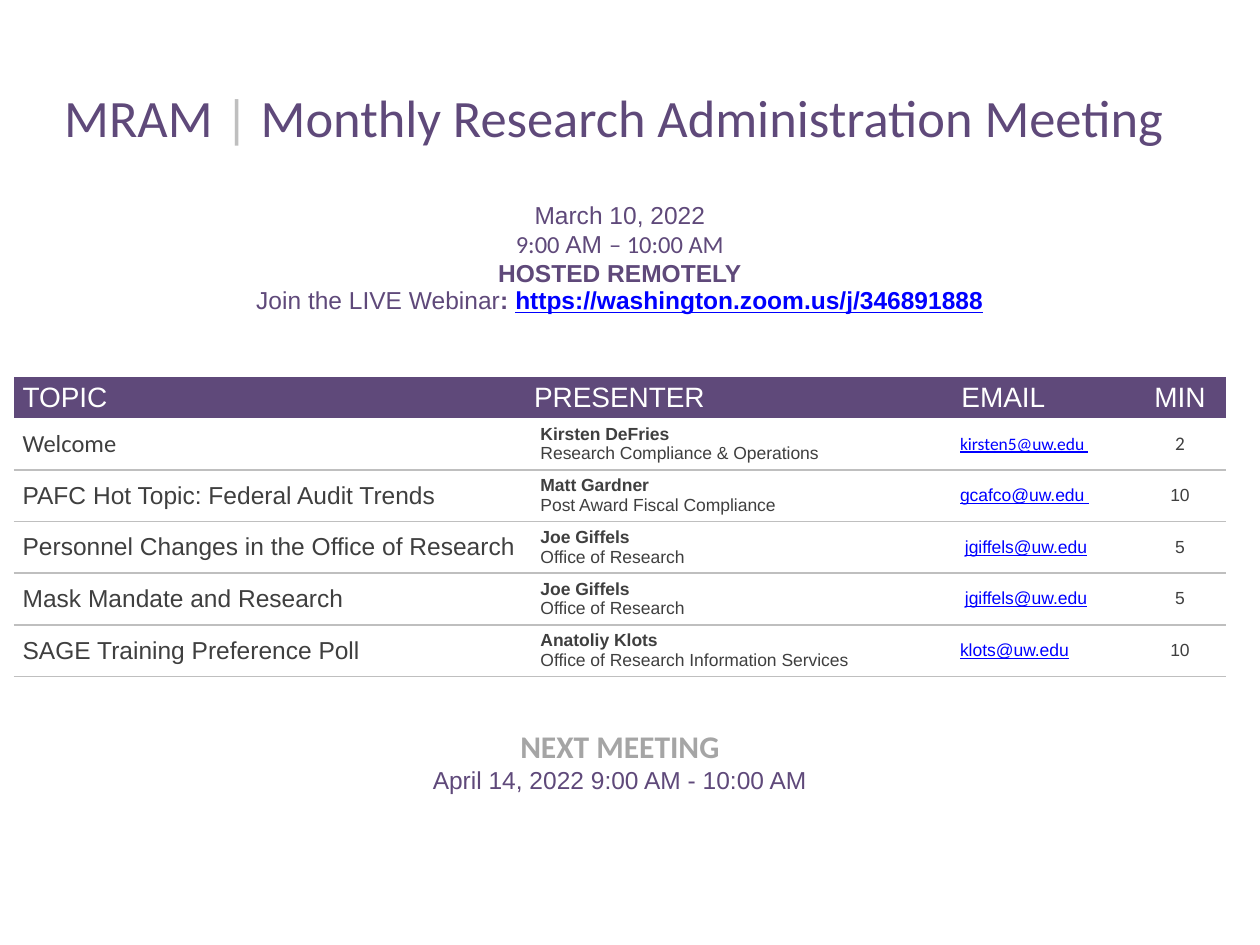
import pptx
import pptx.dml.color
import pptx.enum.text
import pptx.oxml
import pptx.oxml.ns
import pptx.util
from pptx.util import Inches

RGBColor = pptx.dml.color.RGBColor
ALIGN = pptx.enum.text.PP_ALIGN
ANCHOR = pptx.enum.text.MSO_ANCHOR

PURPLE = RGBColor(0x5F, 0x49, 0x7A)
WHITE = RGBColor(0xFF, 0xFF, 0xFF)
DARK = RGBColor(0x3F, 0x3F, 0x3F)
RULE_GRAY = RGBColor(0xBF, 0xBF, 0xBF)
HEADING_GRAY = RGBColor(0xA5, 0xA5, 0xA5)
LINK_BLUE = RGBColor(0x00, 0x00, 0xFF)
NO_GRID_STYLE = "{2D5ABB26-0587-4C30-8999-92F81FD0307C}"

COLUMN_WIDTHS = [4.06, 3.33, 1.5, 0.73]
TOPIC_HEIGHT = 0.41
ROW_HEIGHTS = [0.62, 1.79, 0.33] + [TOPIC_HEIGHT] * 5 + [1.19]

# topic, presenter, office, e-mail, minutes, font of topic, e-mail and minutes
AGENDA = [
    ("Welcome", "Kirsten DeFries", "Research Compliance & Operations",
     "kirsten5@uw.edu ", "2", "Calibri"),
    ("PAFC Hot Topic: Federal Audit Trends", "Matt Gardner",
     "Post Award Fiscal Compliance", "gcafco@uw.edu ", "10", "Arial"),
    ("Personnel Changes in the Office of Research", "Joe Giffels",
     "Office of Research", " jgiffels@uw.edu", "5", "Arial"),
    ("Mask Mandate and Research", "Joe Giffels",
     "Office of Research", " jgiffels@uw.edu", "5", "Arial"),
    ("SAGE Training Preference Poll", "Anatoliy Klots",
     "Office of Research Information Services", "klots@uw.edu", "10", "Arial"),
]


def text_run(text, size, color, font="Arial", bold=False, underline=False):
    return text, size, color, font, bold, underline


def fill_cell(cell, lines, align=ALIGN.LEFT, anchor=ANCHOR.MIDDLE,
              fill=WHITE, side=0.07, bottom=0):
    """Write lines, each a list of text runs, into a cell."""
    cell.fill.solid()
    cell.fill.fore_color.rgb = fill
    cell.vertical_anchor = anchor
    cell.margin_left = cell.margin_right = Inches(side)
    cell.margin_top, cell.margin_bottom = 0, Inches(bottom)
    for index, line in enumerate(lines):
        frame = cell.text_frame
        paragraph = frame.paragraphs[0] if index == 0 else frame.add_paragraph()
        paragraph.alignment = align
        for text, size, color, font, bold, underline in line:
            run = paragraph.add_run()
            run.text = text
            run.font.size = pptx.util.Pt(size)
            run.font.color.rgb = color
            run.font.name = font
            run.font.bold = bold
            run.font.underline = underline


def rule_below(cell):
    border = pptx.oxml.parse_xml(
        f'<a:lnB {pptx.oxml.ns.nsdecls("a")} w="12700"><a:solidFill>'
        f'<a:srgbClr val="{RULE_GRAY}"/></a:solidFill></a:lnB>')
    cell._tc.get_or_add_tcPr().insert(0, border)


def merged_row(table, row):
    first = table.cell(row, 0)
    first.merge(table.cell(row, len(COLUMN_WIDTHS) - 1))
    return first


def add_meeting_table(slide, left, top, width, height):
    frame = slide.shapes.add_table(len(ROW_HEIGHTS), len(COLUMN_WIDTHS),
                                   left, top, width, height)
    table = frame.table
    table.first_row = table.horz_banding = False
    style = table._tbl.tblPr.find(pptx.oxml.ns.qn("a:tableStyleId"))
    style.text = NO_GRID_STYLE
    for column, column_width in zip(table.columns, COLUMN_WIDTHS):
        column.width = Inches(column_width)
    for row, row_height in zip(table.rows, ROW_HEIGHTS):
        row.height = Inches(row_height)
    return table


def write_title(cell):
    fill_cell(cell, [[
        text_run("MRAM ", 30, PURPLE, "Calibri"),
        text_run("|", 30, RULE_GRAY, "Calibri"),
        text_run(" Monthly Research Administration Meeting ", 30, PURPLE, "Calibri"),
    ]], ALIGN.CENTER, ANCHOR.BOTTOM)


def write_session(cell):
    fill_cell(cell, [
        [text_run("March 10, 2022", 14, PURPLE)],
        [text_run("9:00 ", 14, PURPLE, "Calibri"),
         text_run("AM ", 14, PURPLE),
         text_run("– 10:00 AM", 14, PURPLE, "Calibri")],
        [text_run("HOSTED REMOTELY", 14, PURPLE, bold=True)],
        [text_run("Join the LIVE Webinar", 14, PURPLE),
         text_run(": ", 14, PURPLE, bold=True),
         text_run("https://washington.zoom.us/j/346891888", 14, LINK_BLUE,
                  bold=True, underline=True)],
    ], ALIGN.CENTER, ANCHOR.BOTTOM, bottom=0.49)


def write_agenda(table, first_row):
    # Column headings
    headings = ["TOPIC", "PRESENTER", " EMAIL", "MIN"]
    for column, heading in enumerate(headings):
        fill_cell(table.cell(first_row, column), [[text_run(heading, 16, WHITE)]],
                  ALIGN.CENTER if heading == "MIN" else ALIGN.LEFT, fill=PURPLE)

    # One row for each topic
    for row, entry in enumerate(AGENDA, first_row + 1):
        topic, presenter, office, email, minutes, font = entry
        topic_cell, presenter_cell, email_cell, minutes_cell = table.rows[row].cells
        fill_cell(topic_cell, [[text_run(topic, 14, DARK, font)]])
        fill_cell(presenter_cell, [[text_run(presenter, 10, DARK, bold=True)],
                                   [text_run(office, 10, DARK)]], side=0.12)
        address = email.lstrip()
        email_line = [text_run(address, 10, LINK_BLUE, font, underline=True)]
        if address != email:
            email_line.insert(0, text_run(" ", 10, DARK))
        fill_cell(email_cell, [email_line], side=0.12)
        fill_cell(minutes_cell,
                  [[text_run(minutes, 11 if font == "Calibri" else 10, DARK, font)]],
                  ALIGN.CENTER)
        for cell in table.rows[row].cells:
            rule_below(cell)


def write_next_meeting(cell):
    fill_cell(cell, [
        [text_run("NEXT MEETING", 18, HEADING_GRAY, "Calibri", bold=True)],
        [text_run("April 14, 2022 9:00 AM - 10:00 AM", 14, PURPLE)],
    ], ALIGN.CENTER, ANCHOR.BOTTOM, bottom=0.25)


def main():
    presentation = pptx.Presentation()
    presentation.slide_width, presentation.slide_height = Inches(10), Inches(7.5)
    slide = presentation.slides.add_slide(presentation.slide_layouts[6])
    table = add_meeting_table(slide, Inches(0.11), Inches(0.58),
                              Inches(9.62), Inches(6.02))
    write_title(merged_row(table, 0))
    write_session(merged_row(table, 1))
    write_agenda(table, 2)
    write_next_meeting(merged_row(table, len(ROW_HEIGHTS) - 1))
    presentation.save("out.pptx")


if __name__ == "__main__":
    main()
